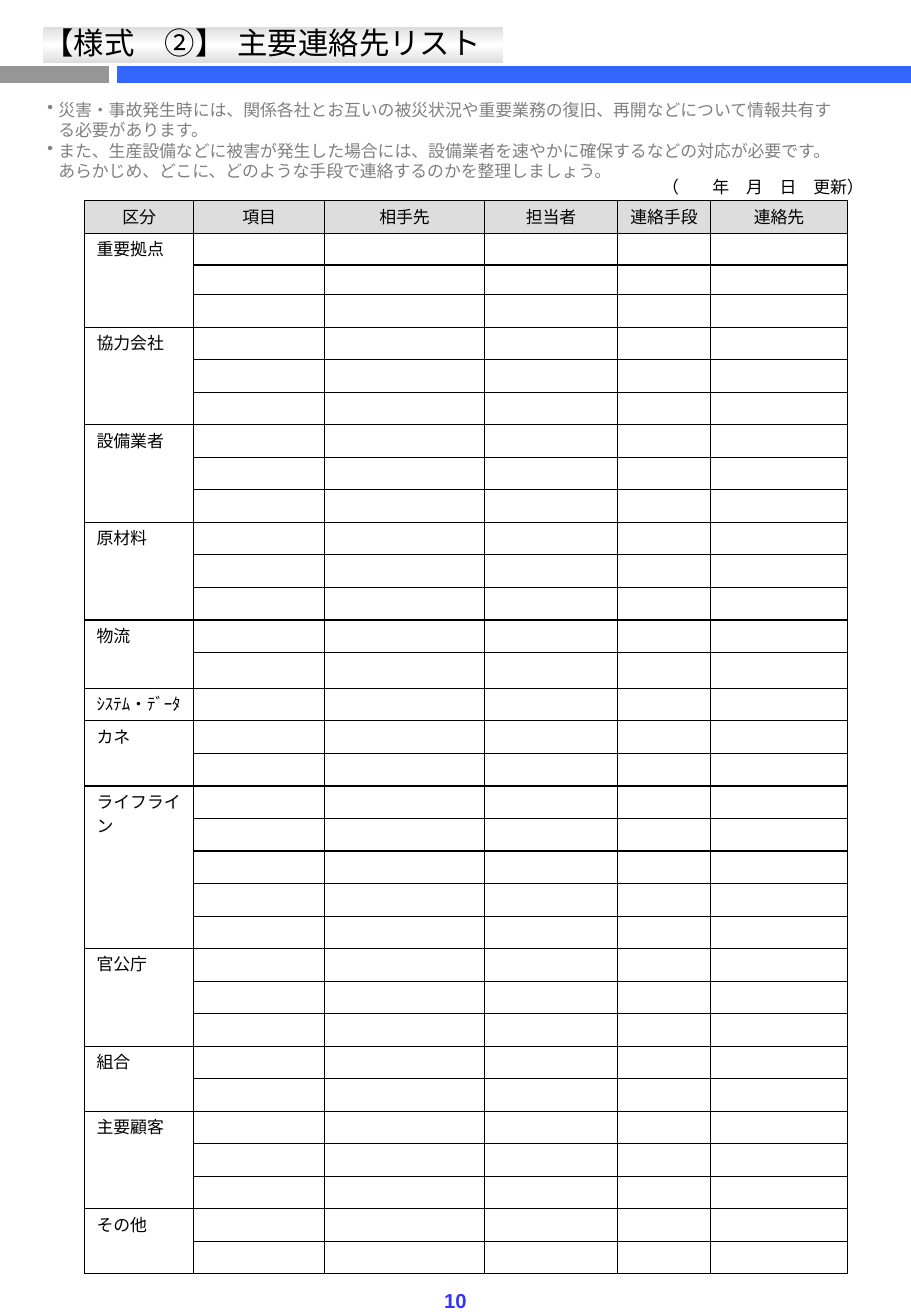
from lxml import etree
from pptx import Presentation
from pptx.dml.color import RGBColor
from pptx.enum.lang import MSO_LANGUAGE_ID
from pptx.enum.shapes import MSO_CONNECTOR, MSO_SHAPE
from pptx.enum.text import PP_ALIGN
from pptx.oxml import parse_xml
from pptx.oxml.ns import nsdecls, qn
from pptx.util import Cm, Pt

LEFT, CENTER, RIGHT = PP_ALIGN.LEFT, PP_ALIGN.CENTER, PP_ALIGN.RIGHT
STRAIGHT, RECTANGLE = MSO_CONNECTOR.STRAIGHT, MSO_SHAPE.RECTANGLE
JAPANESE = MSO_LANGUAGE_ID.JAPANESE
BLACK = RGBColor(0x00, 0x00, 0x00)
GRAY = RGBColor(0x80, 0x80, 0x80)
BAR_GRAY = RGBColor(0x96, 0x96, 0x96)
BAR_BLUE = RGBColor(0x33, 0x66, 0xFF)
PAGE_BLUE = RGBColor(0x33, 0x33, 0xFF)
HEADER_GRAY = RGBColor(0xDD, 0xDD, 0xDD)
ARIAL, NOTO = "Arial", "Noto Sans CJK JP"

BARS = [(0, 2.28, BAR_GRAY), (2.44, 19.05, BAR_BLUE)]
BAR_Y = 1.55
TITLE_BAND = (0.91, 0.56, 9.6, 0.76)
TITLES = [
    ("主要連絡先リスト", (4.72, 0.38, 5.59, 1.02)),
    ("【様式　②】　", (0.66, 0.38, 4.95, 1.02)),
]
GUIDANCE = [
    "災害・事故発生時には、関係各社とお互いの被災状況や重要業務の復旧、再開などについて情報共有する必要があります。",
    "また、生産設備などに被害が発生した場合には、設備業者を速やかに確保するなどの対応が必要です。"
    "あらかじめ、どこに、どのような手段で連絡するのかを整理しましょう。",
]
UPDATED = "（　　年　月　日　更新）"
PAGE_NUMBER = "10"

COLUMNS = [("区分", 2.28), ("項目", 2.74), ("相手先", 3.34),
           ("担当者", 2.79), ("連絡手段", 1.93), ("連絡先", 2.88)]
CATEGORIES = [
    ("重要拠点", 3), ("協力会社", 3), ("設備業者", 3), ("原材料", 3),
    ("物流", 2), ("ｼｽﾃﾑ・ﾃﾞｰﾀ", 1), ("カネ", 2), ("ライフライン", 5),
    ("官公庁", 3), ("組合", 2), ("主要顧客", 3), ("その他", 2),
]
TABLE_LEFT, TABLE_TOP = 1.77, 4.2
ROW_HEIGHT = 0.68
SPECIAL_HEIGHTS = {1: 0.66, 2: 0.62, 14: 0.75}


def style_run(run, size, font, color, bold=False):
    run.font.size = Pt(size)
    run.font.name = font
    run.font.bold = bold
    run.font.color.rgb = color
    run.font.language_id = JAPANESE
    east_asian = etree.SubElement(run.font._element, qn("a:ea"))
    east_asian.set("typeface", font)


def add_text(slide, lines, box, size, font, color, align=LEFT, wrap=False, bold=False):
    frame = slide.shapes.add_textbox(*map(Cm, box)).text_frame
    frame.word_wrap = wrap
    frame.text = "\n".join(lines)
    for paragraph in frame.paragraphs:
        paragraph.alignment = align
        style_run(paragraph.runs[0], size, font, color, bold)
    return frame


def add_bars(slide):
    for start, end, color in BARS:
        bar = slide.shapes.add_connector(STRAIGHT, Cm(start), Cm(BAR_Y), Cm(end), Cm(BAR_Y))
        bar.line.color.rgb = color
        bar.line.width = Pt(10)
        etree.SubElement(bar._element.spPr, qn("a:effectLst"))


def add_title_band(slide):
    band = slide.shapes.add_shape(RECTANGLE, *map(Cm, TITLE_BAND))
    stops = "".join(
        f'<a:gs pos="{position * 1000}"><a:srgbClr val="{color}"/></a:gs>'
        for position, color in [(0, "DDDDDD"), (50, "FFFFFF"), (100, "DDDDDD")])
    band._element.spPr.insert(2, parse_xml(
        f'<a:gradFill {nsdecls("a")} rotWithShape="1"><a:gsLst>{stops}</a:gsLst>'
        '<a:lin ang="5400000" scaled="1"/></a:gradFill>'))
    band.line.fill.background()
    band.shadow.inherit = False


def add_guidance(slide):
    frame = add_text(slide, GUIDANCE, (0.74, 1.96, 17.2, 1.96), 10, NOTO, GRAY, wrap=True)
    for paragraph in frame.paragraphs:
        paragraph.line_spacing = Pt(12)
        properties = paragraph._p.get_or_add_pPr()
        properties.set("marL", str(Cm(0.23)))
        properties.set("indent", str(-Cm(0.23)))
        etree.SubElement(properties, qn("a:buChar")).set("char", "•")


def format_cell(cell):
    cell.margin_left = cell.margin_right = Cm(0.25)
    cell.margin_top, cell.margin_bottom = Cm(0.06), 0
    cell.fill.background()
    properties = cell._tc.get_or_add_tcPr()
    for index, side in enumerate(("lnL", "lnR", "lnT", "lnB")):
        properties.insert(index, parse_xml(
            f'<a:{side} {nsdecls("a")} w="{Pt(0.75)}"><a:solidFill>'
            f'<a:srgbClr val="{BLACK}"/></a:solidFill></a:{side}>'))
    ending = etree.SubElement(cell.text_frame.paragraphs[0]._p, qn("a:endParaRPr"))
    ending.set("sz", "1000")


def write_cell(cell, label, align):
    paragraph = cell.text_frame.paragraphs[0]
    paragraph.text = label
    paragraph.alignment = align
    paragraph.space_before = Pt(2)
    style_run(paragraph.runs[0], 10, NOTO, BLACK)


def add_contacts(slide):
    row_count = 1 + sum(count for _, count in CATEGORIES)
    heights = [SPECIAL_HEIGHTS.get(row, ROW_HEIGHT) for row in range(row_count)]
    width = sum(column_width for _, column_width in COLUMNS)
    contacts = slide.shapes.add_table(
        row_count, len(COLUMNS), Cm(TABLE_LEFT), Cm(TABLE_TOP),
        Cm(width), Cm(sum(heights))).table
    contacts.first_row = contacts.horz_banding = False
    for row, height in zip(contacts.rows, heights):
        row.height = Cm(height)
        for cell in row.cells:
            format_cell(cell)
    for index, (heading, column_width) in enumerate(COLUMNS):
        contacts.columns[index].width = Cm(column_width)
        header = contacts.cell(0, index)
        write_cell(header, heading, CENTER)
        header.fill.solid()
        header.fill.fore_color.rgb = HEADER_GRAY
    first = 1
    for category, count in CATEGORIES:
        cell = contacts.cell(first, 0)
        write_cell(cell, category, LEFT)
        if count > 1:
            cell.merge(contacts.cell(first + count - 1, 0))
        first += count


def main():
    presentation = Presentation()
    presentation.slide_width, presentation.slide_height = Cm(19.05), Cm(27.51)
    slide = presentation.slides.add_slide(presentation.slide_layouts[6])
    add_bars(slide)
    add_title_band(slide)
    for title, box in TITLES:
        add_text(slide, [title], box, 18, ARIAL, BLACK)
    add_guidance(slide)
    add_text(slide, [PAGE_NUMBER], (9.04, 26.8, 0.97, 0.76), 12, ARIAL, PAGE_BLUE,
             align=CENTER, bold=True)
    add_contacts(slide)
    add_text(slide, [UPDATED], (11.91, 3.56, 6.4, 0.69), 10, ARIAL, BLACK,
             align=RIGHT, wrap=True)
    presentation.save("out.pptx")


if __name__ == "__main__":
    main()
